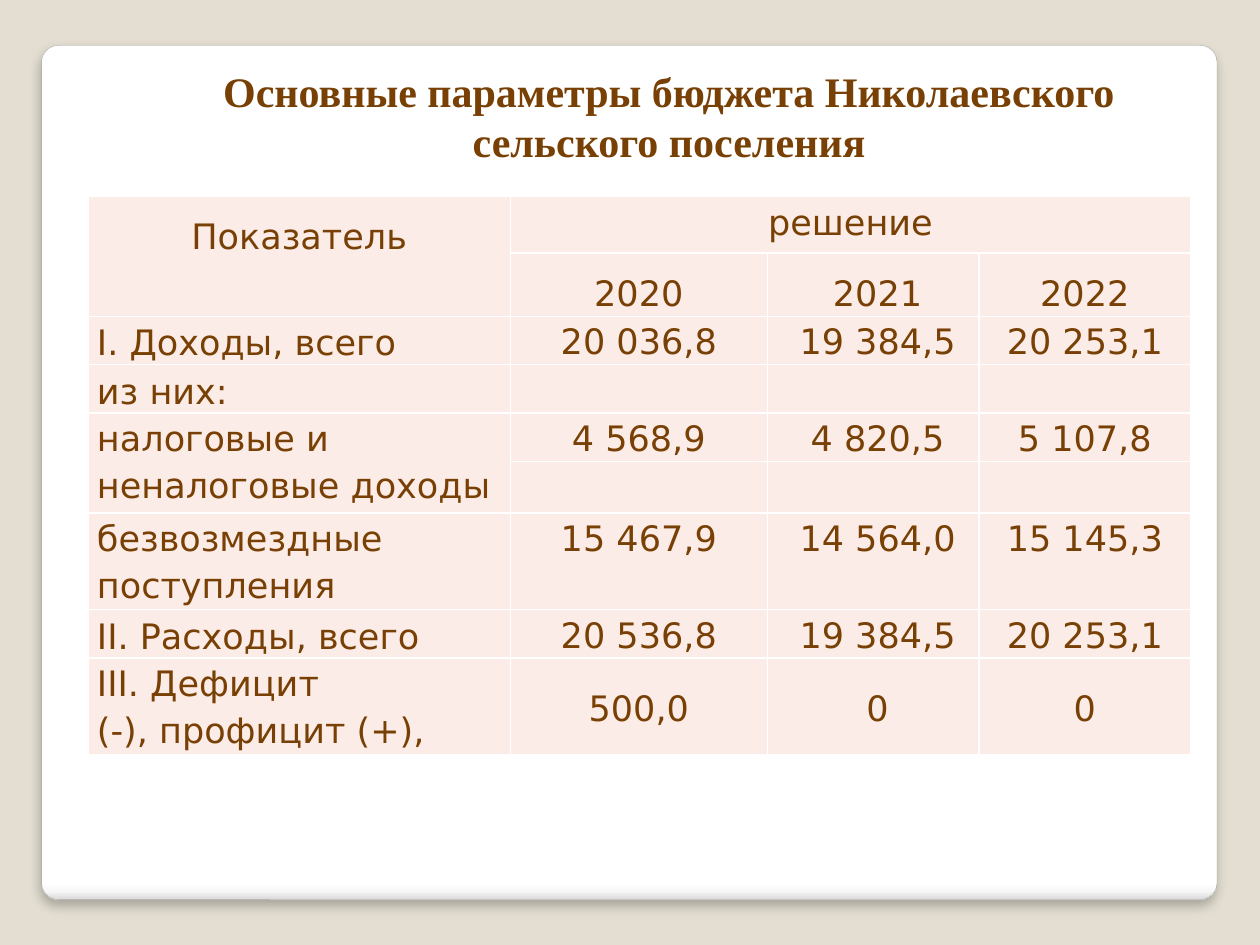
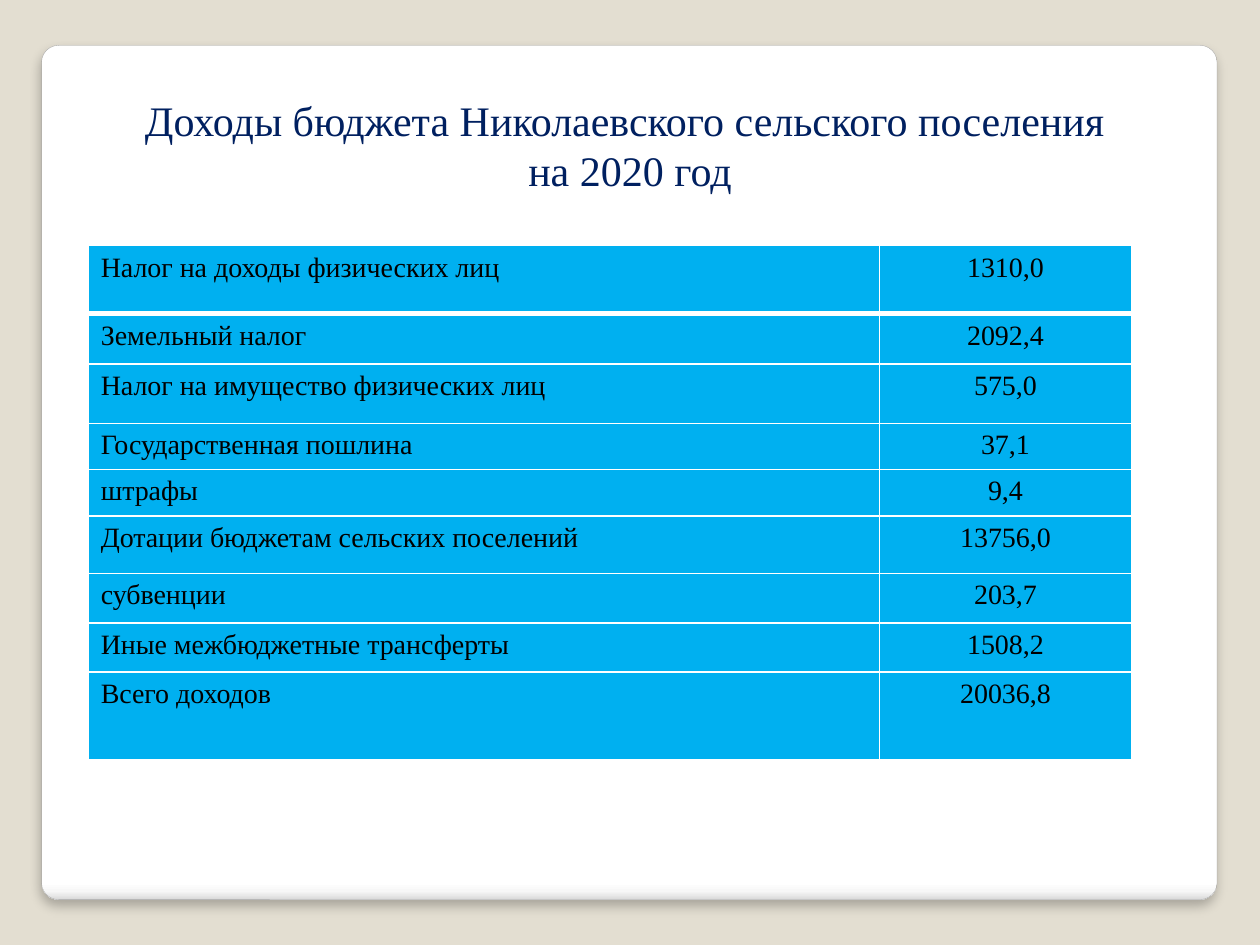
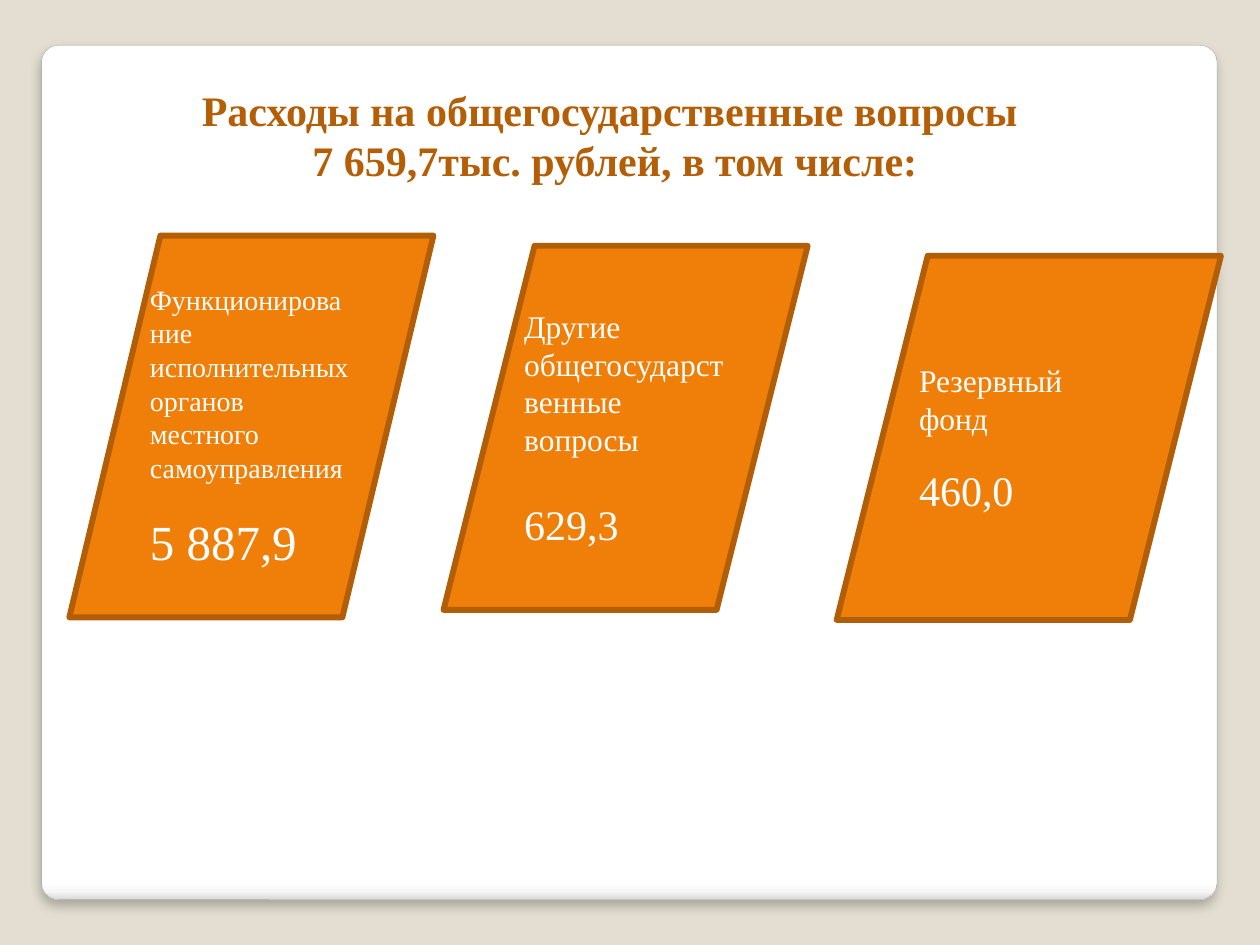
"""Build three slides on the budget of a rural settlement."""
from dataclasses import dataclass

import pptx
import pptx.dml.color
import pptx.enum.shapes
import pptx.enum.text
import pptx.oxml
import pptx.oxml.ns
import pptx.shapes.autoshape
import pptx.slide
import pptx.table
import pptx.text.text
import pptx.util

Inches, Pt = pptx.util.Inches, pptx.util.Pt
RGBColor = pptx.dml.color.RGBColor
Align, Anchor = pptx.enum.text.PP_ALIGN, pptx.enum.text.MSO_ANCHOR
Shape = pptx.enum.shapes.MSO_SHAPE

SAND = RGBColor(0xE3, 0xDE, 0xD1)
GREY = RGBColor(0xA4, 0xA4, 0xA4)
WHITE = RGBColor(0xFF, 0xFF, 0xFF)
BLACK = RGBColor(0x00, 0x00, 0x00)
BROWN = RGBColor(0x78, 0x40, 0x04)
PINK = RGBColor(0xFC, 0xEC, 0xE7)
NAVY = RGBColor(0x00, 0x20, 0x60)
SKY = RGBColor(0x00, 0xB0, 0xF0)
RUST = RGBColor(0xB4, 0x5F, 0x07)
ORANGE = RGBColor(0xF0, 0x7F, 0x09)
DARK_ORANGE = RGBColor(0xB2, 0x5E, 0x07)

SERIF, SANS = "Times New Roman", "DejaVu Sans"
PANEL_STOPS = ((0, WHITE), (98, WHITE), (99, RGBColor(0xF7, 0xF7, 0xF7)),
               (100, RGBColor(0xDA, 0xDA, 0xDA)))
NS = pptx.oxml.ns.nsdecls("a")


@dataclass(frozen=True)
class Style:
    """Font of a piece of text."""
    size: float
    color: RGBColor
    font: str = SERIF
    bold: bool = False


@dataclass(frozen=True)
class Title:
    """Heading with its place and lines."""
    left: float
    top: float
    width: float
    lines: tuple[str, ...]
    style: Style


@dataclass(frozen=True)
class Row:
    """Table row: a label and its values."""
    height: float
    label: str
    values: tuple[str, ...]
    label_anchor: Anchor = Anchor.TOP
    value_anchor: Anchor = Anchor.TOP
    label_spacing: float | None = None
    value_spacing: float | None = None


@dataclass(frozen=True)
class Grid:
    """Table with one fill and one text style."""
    top: float
    widths: tuple[float, ...]
    rows: tuple[Row, ...]
    fill: RGBColor
    style: Style
    spacing: float = 1.0
    insets: tuple[float, float] = (0.1, 0.05)
    indents: tuple[float, ...] = ()
    header_rule: float = 1
    merges: tuple[tuple[int, int, int, int], ...] = ()


@dataclass(frozen=True)
class Expense:
    """Slanted card with an expense and its amount."""
    left: float
    top: float
    width: float
    height: float
    name: str
    name_size: float
    gap: float
    amount: str
    amount_size: float


BUDGET_TITLE = Title(1.09, 0.47, 8.44, (
    "Основные параметры бюджета Николаевского сельского поселения",),
    Style(24, BROWN, bold=True))
BUDGET = Grid(1.56, (3.35, 2.04, 1.68, 1.68), (
    Row(0.45, "Показатель", ("решение", "", ""), label_spacing=1.5),
    Row(0.43, "", ("2020", "2021", "2022"), value_spacing=1.5),
    Row(0.38, "I. Доходы, всего", ("20 036,8", "19 384,5", "20 253,1"), Anchor.MIDDLE),
    Row(0.38, "из них:", ("", "", ""), Anchor.MIDDLE),
    Row(0.34, "налоговые и неналоговые доходы", ("4 568,9", "4 820,5", "5 107,8")),
    Row(0.41, "", ("", "", "")),
    Row(0.75, "безвозмездные поступления", ("15 467,9", "14 564,0", "15 145,3")),
    Row(0.38, "II. Расходы, всего", ("20 536,8", "19 384,5", "20 253,1"), Anchor.MIDDLE),
    Row(0.75, "III. Дефицит\n(-), профицит (+),", ("500,0", "0", "0"),
        value_anchor=Anchor.MIDDLE),
), PINK, Style(20, BROWN, SANS), 1.15, (0.07, 0), (0, 0, 0.07, 0),
    merges=((0, 0, 1, 0), (0, 1, 0, 3), (4, 0, 5, 0)))

INCOME_TITLE = Title(0.78, 0.7, 8.44, (
    "Доходы бюджета Николаевского сельского поселения ", "на 2020 год"),
    Style(24, NAVY))
INCOME = Grid(1.95, (6.28, 2.0), (
    Row(0.54, "Налог на доходы физических лиц", ("1310,0",)),
    Row(0.4, "Земельный налог", ("2092,4",)),
    Row(0.47, "Налог на имущество физических лиц", ("575,0",)),
    Row(0.32, "Государственная пошлина", ("37,1",)),
    Row(0.35, "штрафы", ("9,4",)),
    Row(0.46, "Дотации бюджетам сельских поселений", ("13756,0",)),
    Row(0.39, "субвенции", ("203,7",)),
    Row(0.39, "Иные межбюджетные трансферты", ("1508,2",)),
    Row(0.7, "Всего доходов", ("20036,8",)),
), SKY, Style(16, BLACK), header_rule=3)

EXPENSE_TITLE = Title(0.62, 0.62, 8.52, (
    "Расходы на общегосударственные вопросы ", "7 659,7тыс. рублей, в том числе:"),
    Style(24, RUST, bold=True))
EXPENSES = (
    Expense(0.55, 1.87, 2.89, 3.03,
            "Функционирование исполнительных органов местного самоуправления",
            16, 16, "5 887,9", 28),
    Expense(3.52, 1.95, 2.89, 2.89, "Другие общегосударственные вопросы",
            18, 23, "629,3", 24),
    Expense(6.64, 2.03, 3.05, 2.89, "Резервный фонд", 18, 16, "460,0", 24),
)


def add_run(p: pptx.text.text._Paragraph, text: str, style: Style) -> None:
    """Add a styled run to a paragraph."""
    r = p.add_run()
    r.text = text
    r.font.size = Pt(style.size)
    r.font.name = style.font
    r.font.bold = style.bold
    r.font.color.rgb = style.color


def add_lines(tf: pptx.text.text.TextFrame, lines: tuple[str, ...], style: Style,
              align: Align, spacing: float | None = None, indent: float = 0) -> None:
    """Write each line as a paragraph of the text frame."""
    for i, line in enumerate(lines):
        p = tf.add_paragraph() if i else tf.paragraphs[0]
        p.alignment = align
        p.line_spacing = spacing
        if indent:
            p._p.get_or_add_pPr().set("indent", str(Inches(indent)))
        add_run(p, line, style)


def add_panel(s: pptx.slide.Slide) -> None:
    """Draw the white rounded panel with its shading and shadow."""
    sp = s.shapes.add_shape(Shape.ROUNDED_RECTANGLE, Inches(0.33), Inches(0.36),
                            Inches(9.33), Inches(6.78))
    sp.adjustments[0] = 0.02
    sp.line.color.rgb = GREY
    sp.line.width = Pt(0.16)
    sp.shadow.inherit = False
    stops = "".join(f'<a:gs pos="{pos * 1000}"><a:srgbClr val="{color}"/></a:gs>'
                    for pos, color in PANEL_STOPS)
    spPr = sp._element.spPr
    spPr.find(pptx.oxml.ns.qn("a:prstGeom")).addnext(pptx.oxml.parse_xml(
        f'<a:gradFill {NS} rotWithShape="1"><a:gsLst>{stops}</a:gsLst>'
        '<a:lin ang="5400000" scaled="0"/></a:gradFill>'))
    spPr.find(pptx.oxml.ns.qn("a:effectLst")).append(pptx.oxml.parse_xml(
        f'<a:outerShdw {NS} blurRad="{Pt(6)}" dist="{Pt(4)}" dir="5400000" algn="t" '
        'rotWithShape="0"><a:srgbClr val="000000"><a:alpha val="25000"/></a:srgbClr>'
        '</a:outerShdw>'))


def add_slide(prs: pptx.presentation.Presentation, title: Title) -> pptx.slide.Slide:
    """Add a slide with the shared background, panel and heading."""
    s = prs.slides.add_slide(prs.slide_layouts[6])
    s.background.fill.solid()
    s.background.fill.fore_color.rgb = SAND
    add_panel(s)
    tf = s.shapes.add_textbox(Inches(title.left), Inches(title.top),
                              Inches(title.width), Inches(0.91)).text_frame
    tf.word_wrap = True
    add_lines(tf, title.lines, title.style, Align.CENTER)
    return s


def set_borders(cell: pptx.table._Cell, top: float, bottom: float) -> None:
    """Give a cell white borders, one point wide at the sides."""
    tcPr = cell._tc.get_or_add_tcPr()
    for i, (side, width) in enumerate(zip("LRTB", (1, 1, top, bottom))):
        tcPr.insert(i, pptx.oxml.parse_xml(
            f'<a:ln{side} {NS} w="{Pt(width)}"><a:solidFill><a:srgbClr val="{WHITE}"/>'
            f'</a:solidFill></a:ln{side}>'))


def fill_cell(cell: pptx.table._Cell, grid: Grid, row: Row, col: int) -> None:
    """Set the fill, margins and text of a cell."""
    cell.fill.solid()
    cell.fill.fore_color.rgb = grid.fill
    side, edge = grid.insets
    cell.margin_left = cell.margin_right = Inches(side)
    cell.margin_top = cell.margin_bottom = Inches(edge)
    if col:
        text, align = row.values[col - 1], Align.CENTER
        anchor, spacing = row.value_anchor, row.value_spacing
    else:
        text, anchor, spacing = row.label, row.label_anchor, row.label_spacing
        align = Align.CENTER if spacing else Align.LEFT
    cell.vertical_anchor = anchor
    if text:
        add_lines(cell.text_frame, tuple(text.split("\n")), grid.style, align,
                  spacing or grid.spacing, grid.indents[col] if grid.indents else 0)


def add_grid(s: pptx.slide.Slide, grid: Grid) -> None:
    """Draw a table."""
    table = s.shapes.add_table(
        len(grid.rows), len(grid.widths), Inches(0.7), Inches(grid.top),
        Inches(sum(grid.widths)), Inches(sum(row.height for row in grid.rows))).table
    table.first_row = table.horz_banding = False
    for col, width in enumerate(grid.widths):
        table.columns[col].width = Inches(width)
    for i, row in enumerate(grid.rows):
        table.rows[i].height = Inches(row.height)
        for col in range(len(grid.widths)):
            cell = table.cell(i, col)
            fill_cell(cell, grid, row, col)
            set_borders(cell, grid.header_rule if i == 1 else 1,
                        grid.header_rule if i == 0 else 1)
    for top, left, bottom, right in grid.merges:
        table.cell(top, left).merge(table.cell(bottom, right))


def add_expense(s: pptx.slide.Slide, expense: Expense) -> None:
    """Draw a slanted expense card."""
    sp = s.shapes.add_shape(Shape.PARALLELOGRAM, Inches(expense.left), Inches(expense.top),
                            Inches(expense.width), Inches(expense.height))
    sp.shadow.inherit = False
    sp.fill.solid()
    sp.fill.fore_color.rgb = ORANGE
    sp.line.color.rgb = DARK_ORANGE
    sp.line.width = Pt(3.35)
    tf = sp.text_frame
    tf.word_wrap = True
    tf.vertical_anchor = Anchor.MIDDLE
    add_lines(tf, (expense.name,), Style(expense.name_size, WHITE), Align.LEFT)
    p = tf.add_paragraph()
    p.alignment = Align.LEFT
    p.space_before = Pt(expense.gap)
    add_run(p, expense.amount, Style(expense.amount_size, WHITE))


def main() -> None:
    """Build and save the presentation."""
    prs = pptx.Presentation()
    prs.slide_width, prs.slide_height = Inches(10), Inches(7.5)
    add_grid(add_slide(prs, BUDGET_TITLE), BUDGET)
    add_grid(add_slide(prs, INCOME_TITLE), INCOME)
    s = add_slide(prs, EXPENSE_TITLE)
    for expense in EXPENSES:
        add_expense(s, expense)
    prs.save("out.pptx")


if __name__ == "__main__":
    main()
